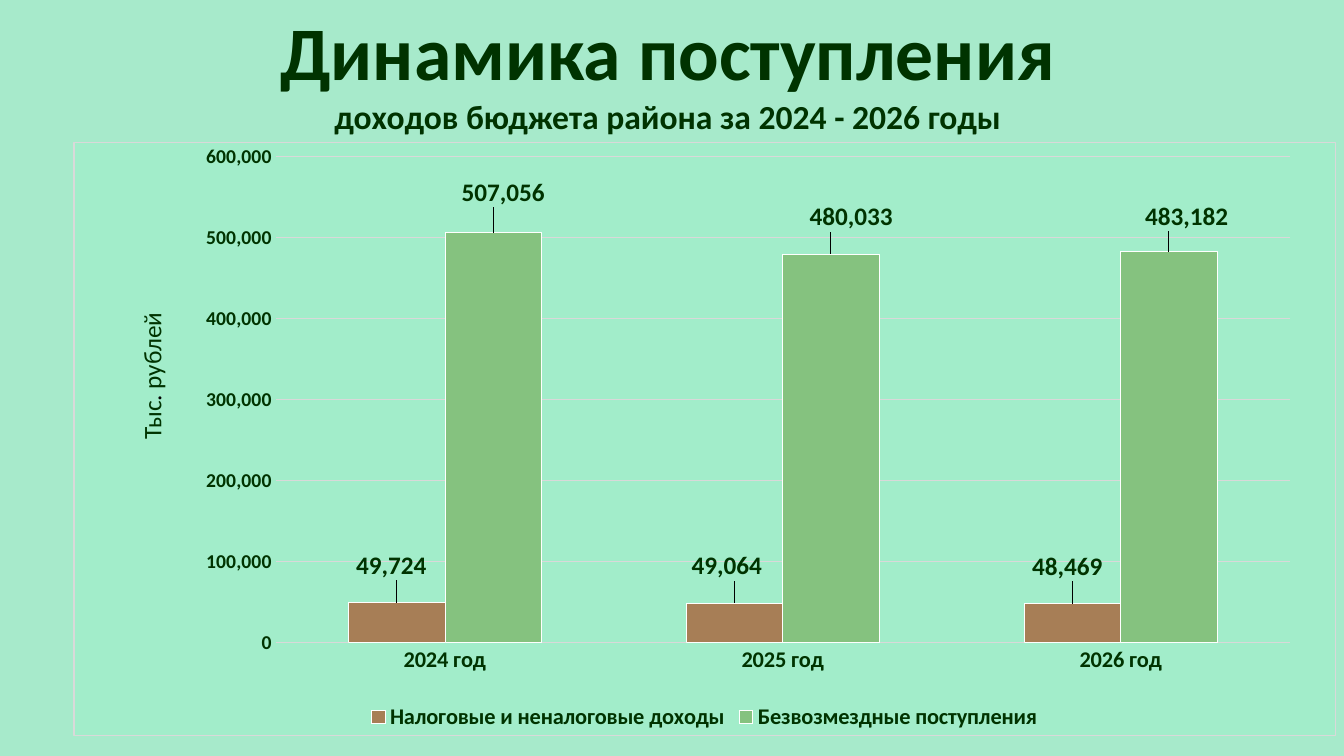
from lxml.etree import fromstring
from pptx import Presentation
from pptx.chart.data import CategoryChartData
from pptx.dml.color import RGBColor
from pptx.enum.chart import XL_CHART_TYPE, XL_LABEL_POSITION, XL_LEGEND_POSITION, XL_TICK_MARK
from pptx.enum.shapes import MSO_SHAPE
from pptx.enum.text import MSO_AUTO_SIZE, PP_ALIGN
from pptx.util import Pt

COLORS = {"back": "A7EACB", "panel": "A2EDCA", "ink": "003300", "black": "000000",
          "grid": "D9D9D9", "edge": "FFFFFF", "tax": "A77E56", "grant": "85C27F"}
FACE = "Calibri"
WIDE, HIGH = 960, 540
SPACE = ('xmlns:c="http://schemas.openxmlformats.org/drawingml/2006/chart" '
         'xmlns:a="http://schemas.openxmlformats.org/drawingml/2006/main"')
YEARS = ["2024 год", "2025 год", "2026 год"]
SERIES = [
    ("Налоговые и неналоговые доходы", "tax", (49724, 49064, 48469),
     ((-0.004, -0.03), (-0.006, -0.03), (-0.004, -0.03))),
    ("Безвозмездные поступления", "grant", (507056, 480033, 483182),
     ((0.008, -0.035), (0.016, -0.03), (0.014, -0.027))),
]


def color(name):
    """Return the named colour."""
    return RGBColor.from_string(COLORS[name])


def style(font, size, bold=False, ink="ink"):
    """Set face, size, weight and colour of a font."""
    font.name, font.size, font.bold = FACE, Pt(size), bold
    font.color.rgb = color(ink)


def layout(**parts):
    """Build a manual chart layout element."""
    body = "".join(f'<c:{key} val="{val}"/>' for key, val in parts.items())
    return fromstring(f"<c:layout {SPACE}><c:manualLayout>{body}</c:manualLayout></c:layout>")


def fill(line):
    """Build the panel fill with the given outline."""
    return fromstring(f'<c:spPr {SPACE}><a:solidFill><a:srgbClr val="{COLORS["panel"]}"/>'
                      f"</a:solidFill>{line}</c:spPr>")


def textbox(slide, left, top, width, height):
    """Add a wrapping text box and return it."""
    box = slide.shapes.add_textbox(Pt(left), Pt(top), Pt(width), Pt(height))
    box.text_frame.word_wrap = True
    box.text_frame.auto_size = MSO_AUTO_SIZE.SHAPE_TO_FIT_TEXT
    return box


def back(slide, left, top, width, height):
    """Paint the background."""
    rect = slide.shapes.add_shape(MSO_SHAPE.RECTANGLE, Pt(left), Pt(top), Pt(width), Pt(height))
    rect.shadow.inherit = False
    rect.fill.solid()
    rect.fill.fore_color.rgb = color("back")
    rect.line.fill.background()


def title(slide, left, top, width, height):
    """Write the two title lines."""
    frame = textbox(slide, left, top, width, height).text_frame
    lines = (("Динамика поступления", 54), ("доходов бюджета района за 2024 - 2026 годы", 24))
    for num, (text, size) in enumerate(lines):
        para = frame.add_paragraph() if num else frame.paragraphs[0]
        para.text, para.alignment = text, PP_ALIGN.CENTER
        style(para.font, size, True)


def bars(series, name, shifts):
    """Style one series and shift its labels."""
    series.format.fill.solid()
    series.format.fill.fore_color.rgb = color(name)
    series.format.line.color.rgb = color("edge")
    series.format.line.width = Pt(0.25)
    labels = series.data_labels
    labels.show_value = True
    labels.number_format, labels.number_format_is_linked = "#,##0", False
    labels.position = XL_LABEL_POSITION.OUTSIDE_END
    style(labels.font, 18, True)
    for num in range(len(shifts)):
        label = series.points[num].data_label
        label.position = XL_LABEL_POSITION.OUTSIDE_END
        style(label.font, 18, True)
    for item, (x, y) in zip(series._element.xpath("c:dLbls/c:dLbl"), shifts):
        item.insert(1, layout(x=x, y=y))


def chart(slide, left, top, width, height):
    """Add the revenue column chart."""
    data = CategoryChartData(number_format="#,##0")
    data.categories = YEARS
    for name, _, values, _ in SERIES:
        data.add_series(name, values)
    graph = slide.shapes.add_chart(XL_CHART_TYPE.COLUMN_CLUSTERED, Pt(left), Pt(top),
                                   Pt(width), Pt(height), data).chart
    style(graph.font, 10, ink="black")
    graph.has_title = False
    graph.has_legend = True
    graph.legend.position = XL_LEGEND_POSITION.BOTTOM
    graph.legend.include_in_layout = False
    style(graph.legend.font, 16, True)
    plot = graph.plots[0]
    plot.gap_width, plot.overlap, plot.vary_by_categories = 150, 0, False
    for series, (_, name, _, shifts) in zip(plot.series, SERIES):
        bars(series, name, shifts)
    for axis, size in ((graph.category_axis, 16), (graph.value_axis, 14)):
        axis.major_tick_mark = axis.minor_tick_mark = XL_TICK_MARK.NONE
        axis.format.line.fill.background()
        style(axis.tick_labels.font, size, True)
    scale = graph.value_axis
    scale.minimum_scale, scale.maximum_scale, scale.major_unit = 0, 600000, 100000
    scale.tick_labels.number_format = "#,##0"
    scale.tick_labels.number_format_is_linked = False
    scale.has_major_gridlines = True
    scale.major_gridlines.format.line.color.rgb = color("grid")
    scale.major_gridlines.format.line.width = Pt(0.75)
    root = graph._chartSpace
    area = root.xpath("c:chart/c:plotArea")[0]
    for old in area.xpath("c:layout"):
        area.remove(old)
    area.insert(0, layout(layoutTarget="inner", xMode="edge", yMode="edge",
                          x=0.16, y=0.024, w=0.804, h=0.82))
    area.append(fill("<a:ln><a:noFill/></a:ln>"))
    edge = f'<a:solidFill><a:srgbClr val="{COLORS["grid"]}"/></a:solidFill>'
    root.xpath("c:chart")[0].addnext(fill(f'<a:ln w="{Pt(0.75)}">{edge}</a:ln>'))


def unit(slide, left, top, width, height):
    """Write the unit sideways along the value axis."""
    box = textbox(slide, left, top, width, height)
    box.rotation = 270
    para = box.text_frame.paragraphs[0]
    for text, ink in (("Тыс", "ink"), (". ", "black"), ("рублей", "ink")):
        run = para.add_run()
        run.text = text
        style(run.font, 18, ink=ink)


def main():
    """Build and save the slide."""
    deck = Presentation()
    deck.slide_width, deck.slide_height = Pt(WIDE), Pt(HIGH)
    slide = deck.slides.add_slide(deck.slide_layouts[6])
    back(slide, 0, 0, WIDE, HIGH)
    title(slide, 0, 0, 954, 101.5)
    chart(slide, 52.5, 101.5, 901.5, 424)
    unit(slide, 46, 244, 124.5, 29)
    deck.save("out.pptx")


if __name__ == "__main__":
    main()
